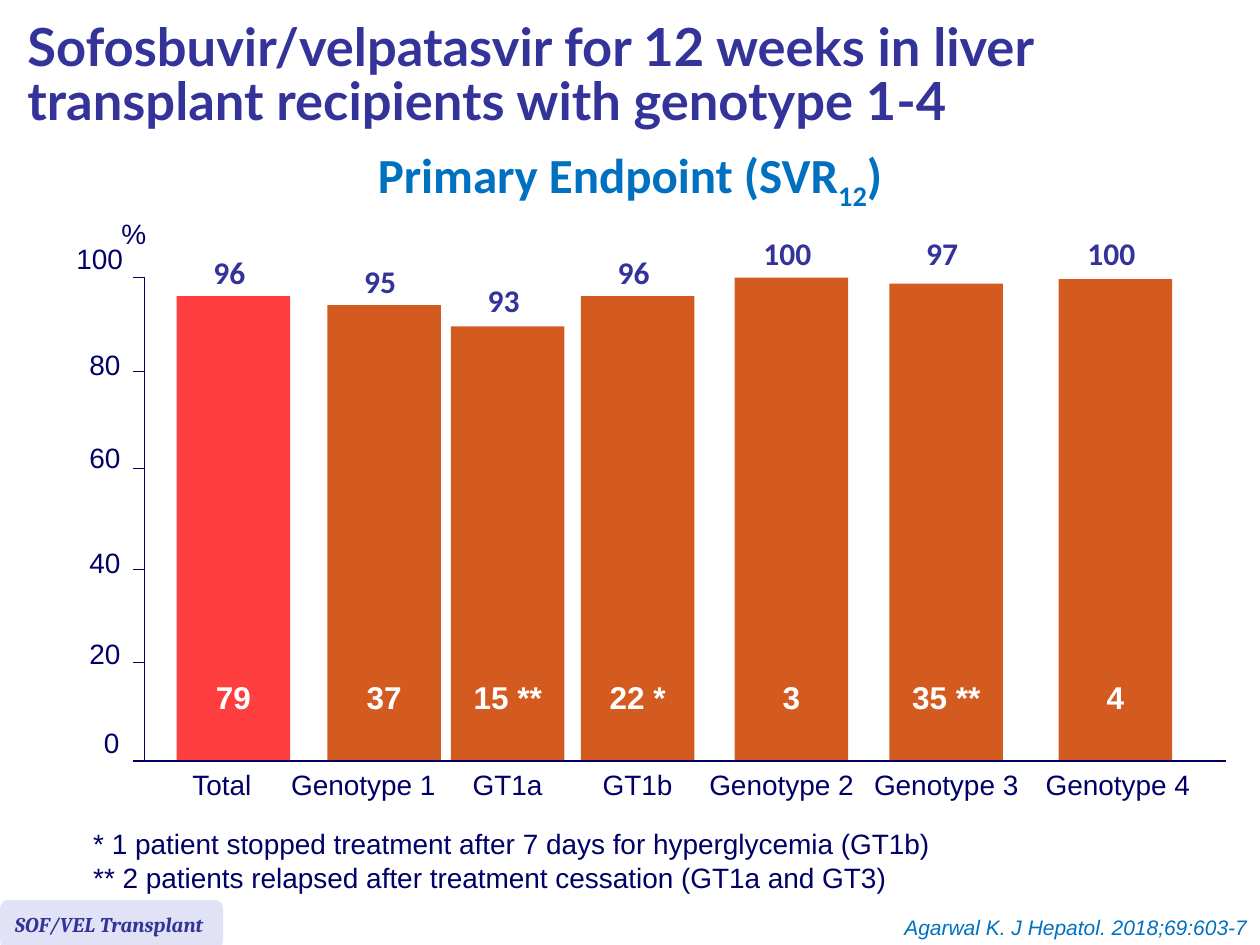
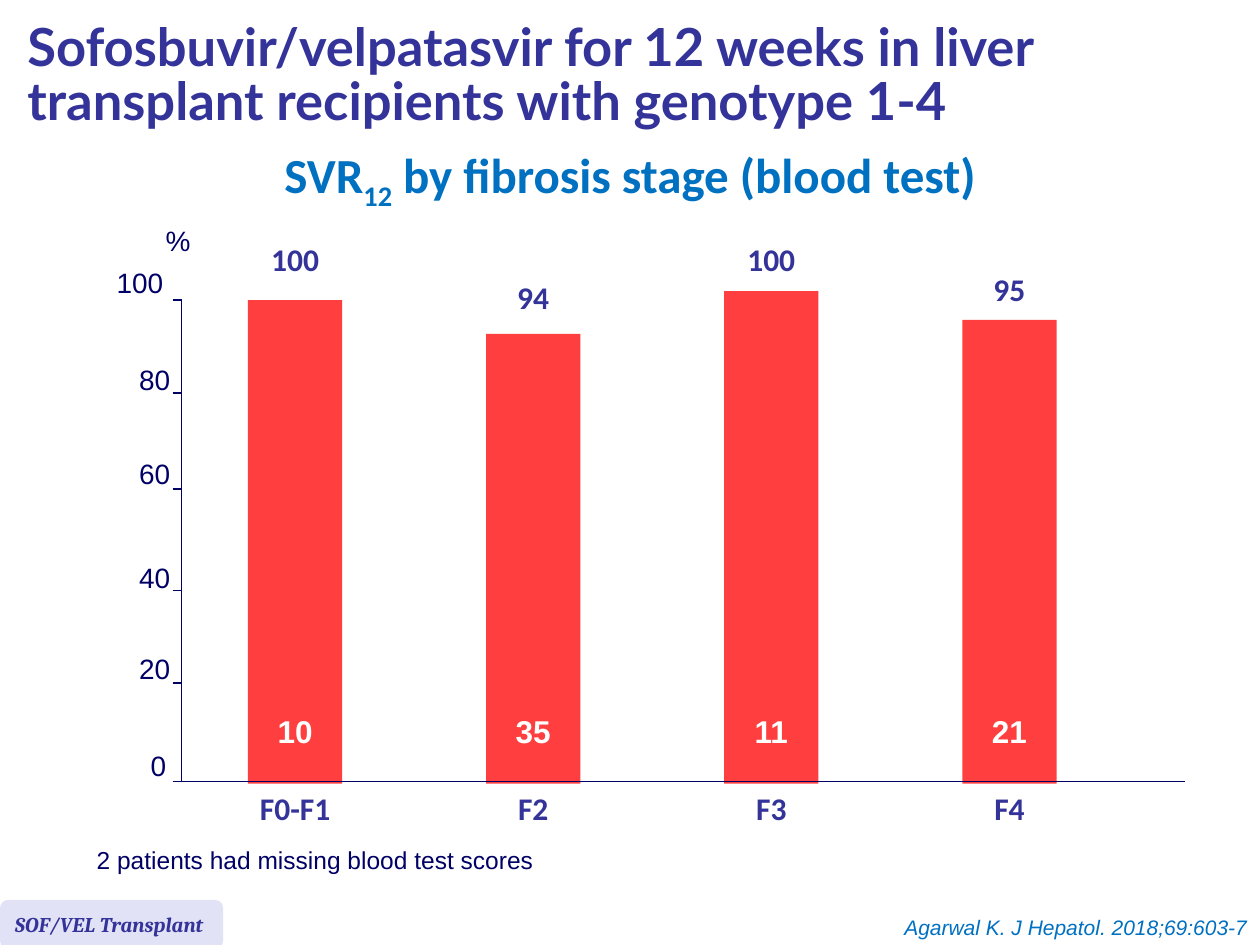
from dataclasses import dataclass

from lxml import etree
from pptx import Presentation
from pptx.dml.color import RGBColor
from pptx.enum.shapes import MSO_CONNECTOR, MSO_SHAPE
from pptx.enum.text import MSO_ANCHOR, MSO_AUTO_SIZE, PP_ALIGN
from pptx.oxml.ns import qn
from pptx.util import Cm, Pt

LEFT, CENTER, RIGHT = PP_ALIGN.LEFT, PP_ALIGN.CENTER, PP_ALIGN.RIGHT
MIDDLE, TOP = MSO_ANCHOR.MIDDLE, MSO_ANCHOR.TOP
NO_AUTOFIT = MSO_AUTO_SIZE.NONE
RECTANGLE, ROUNDED = MSO_SHAPE.RECTANGLE, MSO_SHAPE.ROUNDED_RECTANGLE
STRAIGHT = MSO_CONNECTOR.STRAIGHT

INDIGO = RGBColor(0x33, 0x33, 0x99)
NAVY = RGBColor(0x00, 0x00, 0x66)
BLUE = RGBColor(0x00, 0x70, 0xC0)
RED = RGBColor(0xFF, 0x3F, 0x3F)
ORANGE = RGBColor(0xD3, 0x5B, 0x1F)
LAVENDER = RGBColor(0xE2, 0xE2, 0xF6)
WHITE = RGBColor(0xFF, 0xFF, 0xFF)

TITLE = ("Sofosbuvir/velpatasvir for 12 weeks in liver transplant "
         "recipients with genotype 1-4")
CITATION = "Agarwal K. J Hepatol. 2018;69:603-7"
STUDY = "SOF/VEL Transplant"
TITLE_ONLY = 5
SUBSCRIPT = "-25000"


@dataclass(frozen=True)
class TextStyle:
    font: str
    size: float
    color: RGBColor
    bold: bool = False
    italic: bool = False


TITLE_STYLE = TextStyle("Lato", 30, INDIGO, bold=True)
HEADING_STYLE = TextStyle("Calibri", 28, BLUE, bold=True)
AXIS_STYLE = TextStyle("Arial", 16, NAVY)
SMALL_NOTE_STYLE = TextStyle("Arial", 14, NAVY)
VALUE_STYLE = TextStyle("Calibri", 18, INDIGO, bold=True)
COUNT_STYLE = TextStyle("Arial", 18, WHITE, bold=True)
CITATION_STYLE = TextStyle("Arial", 12, BLUE, italic=True)
STUDY_STYLE = TextStyle("Cambria", 12, INDIGO, bold=True, italic=True)


# All lengths below are centimetres.
@dataclass(frozen=True)
class Tick:
    label: str
    y: float
    label_top: float
    label_right: float


@dataclass(frozen=True)
class Bar:
    left: float
    top: float
    value: str
    value_top: float
    count: str
    category: str
    category_shift: float = 0
    color: RGBColor = RED


@dataclass(frozen=True)
class BarPlot:
    axis_x: float
    tick_left: float
    baseline_right: float
    percent_center: float
    percent_top: float
    ticks: list[Tick]
    bars: list[Bar]
    bar_width: float
    bar_bottom: float
    value_shift: float
    count_top: float
    category_top: float
    category_style: TextStyle


@dataclass(frozen=True)
class Note:
    left: float
    top: float
    height: float
    lines: list[str]
    style: TextStyle


ENDPOINT_PLOT = BarPlot(
    axis_x=2.92, tick_left=2.69, baseline_right=24.71,
    percent_center=2.7, percent_top=4.24,
    ticks=[
        Tick("100", 5.59, 4.75, 2.73),
        Tick("80", 7.49, 6.88, 2.68),
        Tick("60", 9.45, 8.76, 2.68),
        Tick("40", 11.48, 10.87, 2.68),
        Tick("20", 13.36, 12.7, 2.68),
        Tick("0", 15.34, 14.5, 2.66),
    ],
    bars=[
        Bar(3.56, 5.97, "96", 4.98, "79", "Total", -0.23),
        Bar(6.6, 6.15, "95", 5.16, "37", "Genotype 1", -0.42, ORANGE),
        Bar(9.09, 6.58, "93", 5.54, "15 **", "GT1a", 0, ORANGE),
        Bar(11.71, 5.97, "96", 4.98, "22 *", "GT1b", 0, ORANGE),
        Bar(14.81, 5.6, "100", 4.6, "3", "Genotype 2", -0.2, ORANGE),
        Bar(17.93, 5.72, "97", 4.6, "35 **", "Genotype 3", 0, ORANGE),
        Bar(21.34, 5.63, "100", 4.6, "4", "Genotype 4", 0.05, ORANGE),
    ],
    bar_width=2.29, bar_bottom=15.34, value_shift=-0.08,
    count_top=13.54, category_top=15.34, category_style=AXIS_STYLE,
)

FIBROSIS_FIRST, FIBROSIS_STEP = 5, 4.8
FIBROSIS_ROWS = [
    (6.05, "100", 4.72, "10", "F0-F1"),
    (6.73, "94", 5.49, "35", "F2"),
    (5.87, "100", 4.72, "11", "F3"),
    (6.45, "95", 5.31, "21", "F4"),
]
FIBROSIS_PLOT = BarPlot(
    axis_x=3.66, tick_left=3.48, baseline_right=23.88,
    percent_center=3.59, percent_top=4.39,
    ticks=[
        Tick("100", 6.05, 5.23, 3.54),
        Tick("80", 7.92, 7.19, 3.68),
        Tick("60", 9.86, 9.07, 3.68),
        Tick("40", 11.91, 11.18, 3.68),
        Tick("20", 13.77, 13, 3.68),
        Tick("0", 15.75, 14.96, 3.6),
    ],
    bars=[Bar(FIBROSIS_FIRST + FIBROSIS_STEP * index, *row)
          for index, row in enumerate(FIBROSIS_ROWS)],
    bar_width=1.9, bar_bottom=15.8, value_shift=0,
    count_top=14.22, category_top=15.78, category_style=VALUE_STYLE,
)


def format_paragraph(para, style: TextStyle, align=LEFT) -> None:
    para.alignment = align
    font = para.font
    font.name, font.size = style.font, Pt(style.size)
    font.bold, font.italic = style.bold, style.italic
    font.color.rgb = style.color


def add_text(slide, left: float, top: float, width: float, height: float,
             lines: list[str], style: TextStyle, align=LEFT):
    box = slide.shapes.add_textbox(Cm(left), Cm(top), Cm(width), Cm(height))
    frame = box.text_frame
    frame.word_wrap = True
    frame.auto_size = NO_AUTOFIT
    frame.vertical_anchor = TOP
    frame.text = "\n".join(lines)
    for para in frame.paragraphs:
        format_paragraph(para, style, align)
    return box


def label_width(text: str) -> float:
    return 0.9 + 0.3 * len(text)


def add_centered_label(slide, center: float, top: float, text: str,
                       style: TextStyle) -> None:
    width = label_width(text)
    add_text(slide, center - width / 2, top, width, 1, [text], style, CENTER)


def add_block(slide, kind, left: float, top: float, width: float,
              height: float, color: RGBColor):
    block = slide.shapes.add_shape(kind, Cm(left), Cm(top), Cm(width), Cm(height))
    block.shadow.inherit = False
    block.fill.solid()
    block.fill.fore_color.rgb = color
    block.line.fill.background()
    return block


def add_line(slide, x1: float, y1: float, x2: float, y2: float) -> None:
    line = slide.shapes.add_connector(STRAIGHT, Cm(x1), Cm(y1), Cm(x2), Cm(y2))
    line.line.color.rgb = NAVY
    line.line.width = Pt(0.75)
    etree.SubElement(line._element.spPr, qn("a:effectLst"))


def add_heading(slide, spans: list[tuple[str, bool]]) -> None:
    """Write the chart heading; each span is a text and whether it is subscript."""
    box = add_text(slide, 0.3, 3.61, 24.8, 0.85, [""], HEADING_STYLE, CENTER)
    para = box.text_frame.paragraphs[0]
    para.line_spacing = Pt(15.2)
    for text, lowered in spans:
        span = para.add_run()
        span.text = text
        if lowered:
            span._r.get_or_add_rPr().set("baseline", SUBSCRIPT)


def add_plot(slide, plot: BarPlot) -> None:
    for bar in plot.bars:
        center = bar.left + plot.bar_width / 2
        add_block(slide, RECTANGLE, bar.left, bar.top, plot.bar_width,
                  plot.bar_bottom - bar.top, bar.color)
        add_centered_label(slide, center + plot.value_shift, bar.value_top,
                           bar.value, VALUE_STYLE)
        add_centered_label(slide, center, plot.count_top, bar.count, COUNT_STYLE)
        add_centered_label(slide, center + bar.category_shift, plot.category_top,
                           bar.category, plot.category_style)

    top, bottom = plot.ticks[0].y, plot.ticks[-1].y
    add_line(slide, plot.axis_x, top, plot.axis_x, bottom)
    for tick in plot.ticks:
        end = plot.baseline_right if tick.y == bottom else plot.axis_x
        add_line(slide, plot.tick_left, tick.y, end, tick.y)
        width = label_width(tick.label)
        add_text(slide, tick.label_right - width, tick.label_top, width, 1,
                 [tick.label], AXIS_STYLE, RIGHT)
    add_centered_label(slide, plot.percent_center, plot.percent_top, "%", AXIS_STYLE)


def add_title(slide) -> None:
    title = slide.shapes.title
    title.left, title.top = Cm(0.3), Cm(0.2)
    title.width, title.height = Cm(25.1), Cm(2.72)
    frame = title.text_frame
    frame.text = TITLE
    frame.word_wrap = True
    frame.auto_size = NO_AUTOFIT
    frame.vertical_anchor = MIDDLE
    para = frame.paragraphs[0]
    para.line_spacing = 0.85
    format_paragraph(para, TITLE_STYLE)


def add_footer(slide) -> None:
    add_text(slide, 6.71, 18.31, 18.69, 0.76, [CITATION], CITATION_STYLE, RIGHT)
    badge = add_block(slide, ROUNDED, 0, 18.14, 4.5, 0.99, LAVENDER)
    badge.adjustments[0] = 0.17
    frame = badge.text_frame
    frame.word_wrap = False
    frame.vertical_anchor = MIDDLE
    frame.text = STUDY
    format_paragraph(frame.paragraphs[0], STUDY_STYLE)


def add_result_slide(deck, heading: list[tuple[str, bool]], plot: BarPlot,
                     note: Note) -> None:
    slide = deck.slides.add_slide(deck.slide_layouts[TITLE_ONLY])
    add_title(slide)
    add_heading(slide, heading)
    add_plot(slide, plot)
    add_text(slide, note.left, note.top, 18.5, note.height, note.lines, note.style)
    add_footer(slide)


def main() -> None:
    deck = Presentation()
    deck.slide_width, deck.slide_height = Cm(25.4), Cm(19.05)
    add_result_slide(
        deck,
        [("Primary Endpoint (SVR", False), ("12", True), (")", False)],
        ENDPOINT_PLOT,
        Note(1.63, 16.54, 1.63, [
            "* 1 patient stopped treatment after 7 days for hyperglycemia (GT1b)",
            "** 2 patients relapsed after treatment cessation (GT1a and GT3)",
        ], AXIS_STYLE),
    )
    add_result_slide(
        deck,
        [("SVR", False), ("12", True), (" by fibrosis stage (blood test)", False)],
        FIBROSIS_PLOT,
        Note(1.7, 16.92, 0.86, ["2 patients had missing blood test scores"],
             SMALL_NOTE_STYLE),
    )
    deck.save("out.pptx")


if __name__ == "__main__":
    main()
